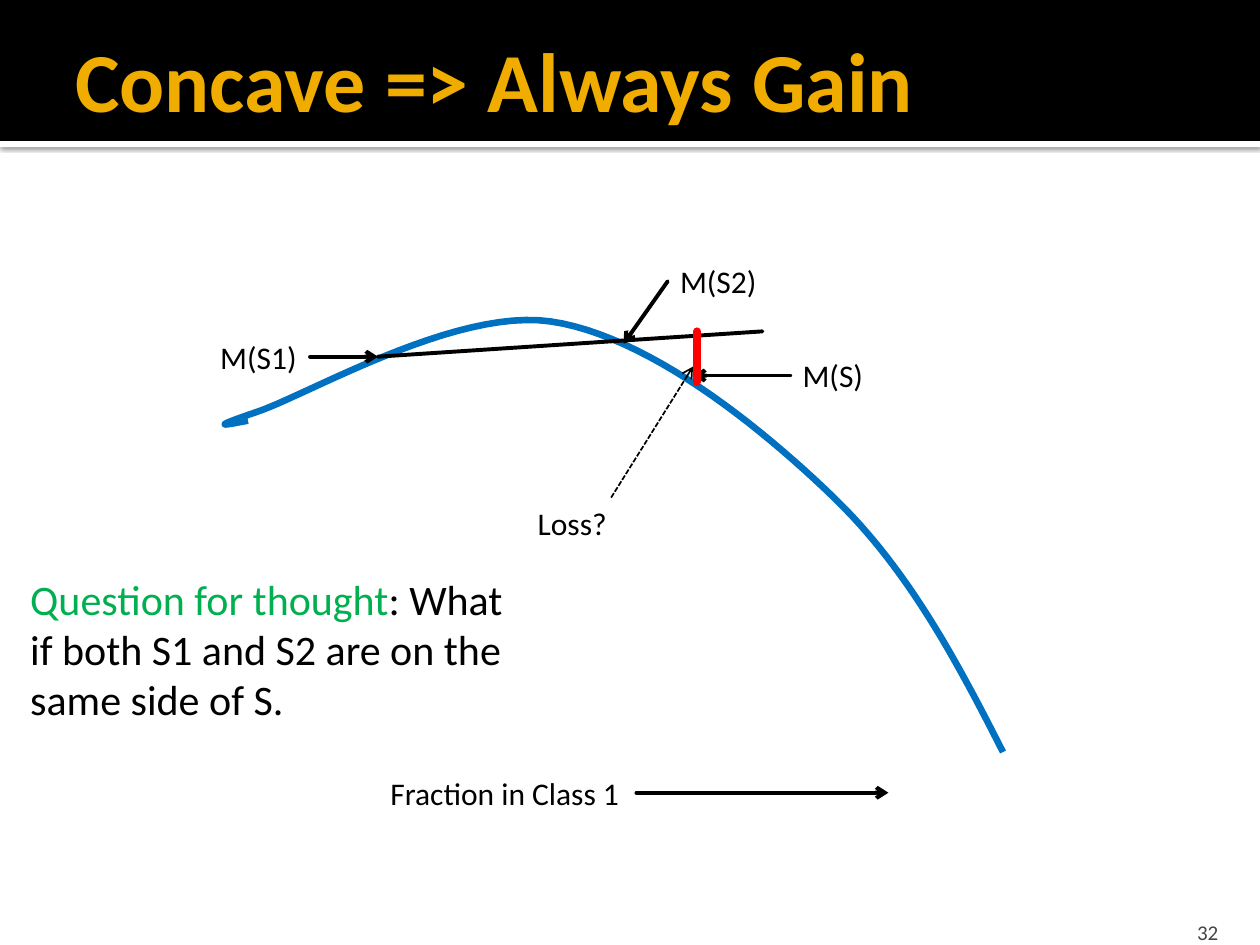
from lxml import etree
from pptx import Presentation
from pptx import util as u
from pptx.dml.color import RGBColor
from pptx.enum import dml, shapes, text
from pptx.oxml import ns

BLACK = RGBColor(0, 0, 0)
WHITE = RGBColor(255, 255, 255)
GOLD = RGBColor(0xF0, 0xAD, 0x00)
GRAY = RGBColor(0x45, 0x45, 0x45)
BLUE = RGBColor(0x00, 0x70, 0xC0)
RED = RGBColor(0xFF, 0, 0)
GREEN = RGBColor(0x00, 0xB0, 0x50)
FONT = "Calibri"
LEFT, RIGHT = 1, 3
LABEL_HEIGHT = 1.02
HEADER_HEIGHT = 2.84

TITLE = "Concave => Always Gain"
PAGE_NUMBER = "32"
QUESTION = [
    [("Question for thought", GREEN), (": What", BLACK)],
    [("if both S1 and S2 are on the", BLACK)],
    [("same side of S.", BLACK)],
]
LABELS = {
    "M(S2)": (13.46, 5.16, 2.08),
    "M(S)": (15.93, 7.06, 1.75),
    "M(S1)": (4.19, 6.68, 2.06),
    "Fraction in Class 1": (7.62, 15.47, 5.21),
    "Loss?": (10.59, 10.03, 1.98),
}
LABEL_ARROWS = [
    ("M(S2)", LEFT, (12.57, 6.93)),
    ("M(S)", LEFT, (13.97, 7.57)),
    ("M(S1)", RIGHT, (7.62, 7.19)),
    ("Fraction in Class 1", RIGHT, (17.91, 15.98)),
]
CHORD = (7.62, 7.19), (15.37, 6.68)
GAP = (14.05, 7.7), (14.05, 6.68)
LOSS_POINTER = (12.32, 10.03), (13.97, 7.39)
CURVE_START = (5.0, 8.48)
CURVE_SEGMENTS = [
    ((4.57, 8.56), (4.14, 8.66), (5.16, 8.31)),
    ((6.17, 7.98), (9.17, 6.2), (11.1, 6.48)),
    ((13.03, 6.76), (15.29, 8.56), (16.81, 10.03)),
    ((18.31, 11.48), (19.28, 13.31), (20.22, 15.16)),
]
CURVE_STEPS = 24


def add_band(page, top, height, color):
    band = page.shapes.add_shape(
        shapes.MSO_SHAPE.RECTANGLE, 0, u.Cm(top), u.Cm(25.4), u.Cm(height))
    band.shadow.inherit = False
    band.fill.solid()
    band.fill.fore_color.rgb = color
    band.line.fill.background()
    return band


def add_band_shadow(band):
    effects = band._element.spPr.find(ns.qn("a:effectLst"))
    shadow = etree.SubElement(effects, ns.qn("a:outerShdw"), blurRad="31750",
                              dist="10160", dir="5400000", rotWithShape="0")
    color = etree.SubElement(shadow, ns.qn("a:srgbClr"), val="000000")
    etree.SubElement(color, ns.qn("a:alpha"), val="60000")


def add_text(page, place, lines, size, bold=False, wrap=False):
    box = page.shapes.add_textbox(*map(u.Cm, place))
    frame = box.text_frame
    frame.word_wrap = wrap
    for number, line in enumerate(lines):
        para = frame.add_paragraph() if number else frame.paragraphs[0]
        for words, color in line:
            span = para.add_run()
            span.text = words
            span.font.color.rgb = color
        para.font.name = FONT
        para.font.size = u.Pt(size)
        para.font.bold = bold
    return box


def add_line(page, start, end, color=BLACK, width=2.25, arrow=False, dashed=False):
    line = page.shapes.add_connector(
        shapes.MSO_CONNECTOR.STRAIGHT, *map(u.Cm, start + end))
    line.line.color.rgb = color
    line.line.width = u.Pt(width)
    outline = line.line._get_or_add_ln()
    if dashed:
        line.line.dash_style = dml.MSO_LINE.SQUARE_DOT
        outline.find(ns.qn("a:prstDash")).set("val", "sysDash")
    else:
        outline.set("cap", "rnd")
    if arrow:
        etree.SubElement(outline, ns.qn("a:tailEnd"), type="arrow")
    etree.SubElement(line._element.spPr, ns.qn("a:effectLst"))
    return line


def bezier_point(points, t):
    weights = ((1 - t) ** 3, 3 * t * (1 - t) ** 2, 3 * t * t * (1 - t), t ** 3)
    return tuple(u.Cm(sum(w * p[axis] for w, p in zip(weights, points)))
                 for axis in (0, 1))


def add_curve(page):
    start, points = CURVE_START, []
    for segment in CURVE_SEGMENTS:
        controls = (start, *segment)
        points += [bezier_point(controls, step / CURVE_STEPS)
                   for step in range(1, CURVE_STEPS + 1)]
        start = segment[-1]
    builder = page.shapes.build_freeform(*map(u.Cm, CURVE_START))
    builder.add_line_segments(points, close=False)
    curve = builder.convert_to_shape()
    curve.shadow.inherit = False
    curve.fill.background()
    curve.line.color.rgb = BLUE
    curve.line.width = u.Pt(3.78)


def main():
    deck = Presentation()
    deck.slide_width, deck.slide_height = u.Cm(25.4), u.Cm(19.05)
    page = deck.slides.add_slide(deck.slide_layouts[6])

    add_band_shadow(add_band(page, HEADER_HEIGHT, 0.13, WHITE))
    add_band(page, 0, HEADER_HEIGHT, BLACK)
    title = add_text(page, (1.27, 0.43, 24.13, 2.34), [[(TITLE, GOLD)]], 48,
                     bold=True, wrap=True)
    title.text_frame.vertical_anchor = text.MSO_ANCHOR.MIDDLE
    number = add_text(page, (22.78, 18.29, 2.03, 0.76), [[(PAGE_NUMBER, GRAY)]], 12,
                      wrap=True)
    number.text_frame.vertical_anchor = text.MSO_ANCHOR.BOTTOM
    number.text_frame.margin_bottom = 0
    number.text_frame.paragraphs[0].alignment = text.PP_ALIGN.RIGHT

    add_curve(page)
    add_line(page, *CHORD)
    labels = {name: add_text(page, (*place, LABEL_HEIGHT), [[(name, BLACK)]], 18)
              for name, place in LABELS.items()}
    for name, side, target in LABEL_ARROWS:
        arrow = add_line(page, target, target, arrow=True)
        arrow.begin_connect(labels[name], side)
    add_line(page, *GAP, color=RED, width=4.5)
    add_line(page, *LOSS_POINTER, width=1, arrow=True, dashed=True)
    add_text(page, (0.36, 11.43, 10.24, 3.33), QUESTION, 24)

    deck.save("out.pptx")


if __name__ == "__main__":
    main()
